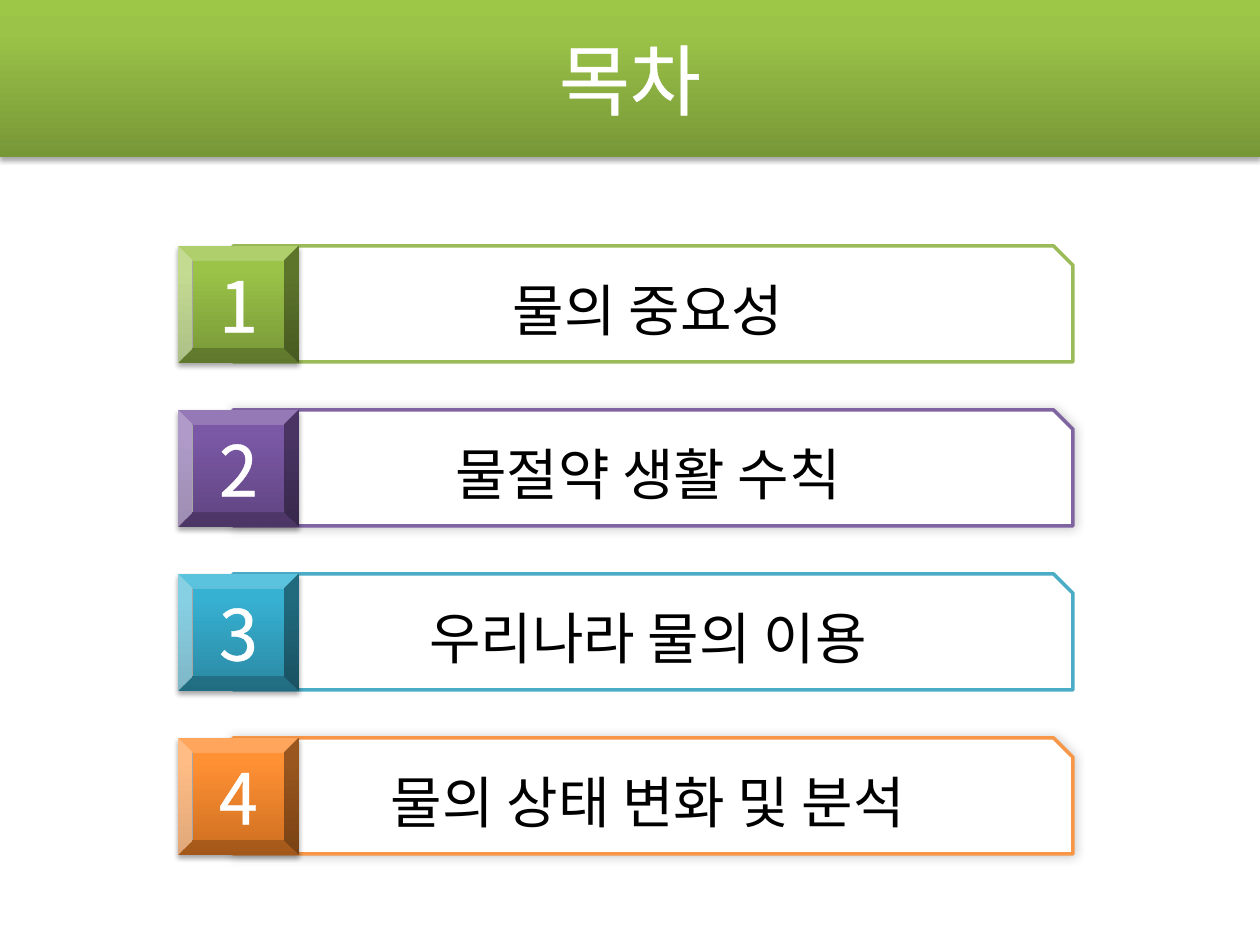
import pptx
import pptx.dml.color
import pptx.enum.shapes
import pptx.enum.text
import pptx.oxml
import pptx.oxml.ns
import pptx.util

PX = 914400 / 126
FONT = "Noto Sans CJK KR"
SHAPES = pptx.enum.shapes.MSO_SHAPE
GREEN = ("779737", "9BC348", "9DC746")
BADGE_SHADOW = (35, 3.1, 1.8, 90)
FRAME_SHADOW = (20, 6, 0, 315)
TOPICS = [
    ("물의 중요성", "9BBB59", GREEN, None),
    ("물절약 생활 수칙", "8064A2", ("5F4480", "7B58A6", "7C57A8"), FRAME_SHADOW),
    ("우리나라 물의 이용", "4BACC6", ("2A88A2", "37B1D2", "34B4D6"), None),
    ("물의 상태 변화 및 분석", "F79646", ("CC6E20", "FF9034", "FF9136"), FRAME_SHADOW),
]


def px(length):
    """Turn pixels into EMU."""
    return pptx.util.Emu(round(length * PX))


def rgb(code):
    """Turn a hex string into a colour."""
    return pptx.dml.color.RGBColor.from_string(code)


def element(xml):
    """Parse a DrawingML element given without its namespace."""
    tag, rest = xml.split(" ", 1)
    return pptx.oxml.parse_xml(f"{tag} {pptx.oxml.ns.nsdecls('a')} {rest}")


def add_box(slide, kind, left, top, width, height):
    """Add a preset shape without line or shadow."""
    box = slide.shapes.add_shape(kind, px(left), px(top), px(width), px(height))
    box.shadow.inherit = False
    box.line.fill.background()
    return box


def shade(box, colours):
    """Fill a box with a gradient rising from its bottom edge."""
    box.fill.gradient()
    box.fill.gradient_angle = 90
    stops = box._element.spPr.find(pptx.oxml.ns.qn("a:gradFill")).gsLst
    for stop in list(stops):
        stops.remove(stop)
    for place, colour in zip((0, 80, 100), colours):
        stops.append(element(f'<a:gs pos="{place * 1000}"><a:srgbClr val="{colour}"/></a:gs>'))


def cast_shadow(box, opacity, blur, distance, angle):
    """Give a box a soft black outer shadow."""
    effects = box._element.spPr.find(pptx.oxml.ns.qn("a:effectLst"))
    effects.append(element(
        f'<a:outerShdw blurRad="{pptx.util.Pt(blur)}" dist="{pptx.util.Pt(distance)}" '
        f'dir="{angle * 60000}" algn="ctr" rotWithShape="0"><a:srgbClr val="000000">'
        f'<a:alpha val="{opacity * 1000}"/></a:srgbClr></a:outerShdw>'))


def write(box, text, size, colour, outlined=False):
    """Write one centred line in a box."""
    frame = box.text_frame
    frame.word_wrap = True
    frame.vertical_anchor = pptx.enum.text.MSO_ANCHOR.MIDDLE
    paragraph = frame.paragraphs[0]
    paragraph.alignment = pptx.enum.text.PP_ALIGN.CENTER
    run = paragraph.add_run()
    run.text = text
    run.font.size = pptx.util.Pt(size)
    run.font.name = FONT
    run.font.color.rgb = rgb(colour)
    properties = run.font._element
    properties.find(pptx.oxml.ns.qn("a:latin")).addnext(element(f'<a:ea typeface="{FONT}"/>'))
    if outlined:
        properties.insert(0, element(
            f'<a:ln w="{pptx.util.Pt(1.45)}"><a:solidFill>'
            f'<a:srgbClr val="{colour}"/></a:solidFill></a:ln>'))


def add_header(slide, left, top, width, height):
    """Place the green band and the title over it."""
    band = add_box(slide, SHAPES.RECTANGLE, left, top, width, height)
    shade(band, GREEN)
    cast_shadow(band, *BADGE_SHADOW)
    title = slide.shapes.add_textbox(px(left + 63), px(top), px(width - 126), px(height))
    write(title, "목차", 44, "FFFFFF", outlined=True)


def add_topic(slide, left, top, width, height, number, topic):
    """Place one numbered row of the contents."""
    text, edge, colours, frame_shadow = topic
    frame = add_box(slide, SHAPES.SNIP_1_RECTANGLE, left + 55, top, width - 55, height)
    frame.fill.solid()
    frame.fill.fore_color.rgb = rgb("FFFFFF")
    frame.line.color.rgb = rgb(edge)
    frame.line.width = pptx.util.Pt(2)
    if frame_shadow:
        cast_shadow(frame, *frame_shadow)
    write(frame, text, 32, "000000")
    badge = add_box(slide, SHAPES.BEVEL, left, top, 121, height + 1)
    shade(badge, colours)
    cast_shadow(badge, *BADGE_SHADOW)
    write(badge, str(number), 40, "FFFFFF", outlined=True)


def main():
    """Build the contents slide."""
    deck = pptx.Presentation()
    deck.slide_width, deck.slide_height = px(1260), px(945)
    slide = deck.slides.add_slide(deck.slide_layouts[6])
    add_header(slide, 0, 0, 1260, 157)
    for index, topic in enumerate(TOPICS):
        add_topic(slide, 178, 246 + 164 * index, 895, 116, index + 1, topic)
    deck.save("out.pptx")


if __name__ == "__main__":
    main()
